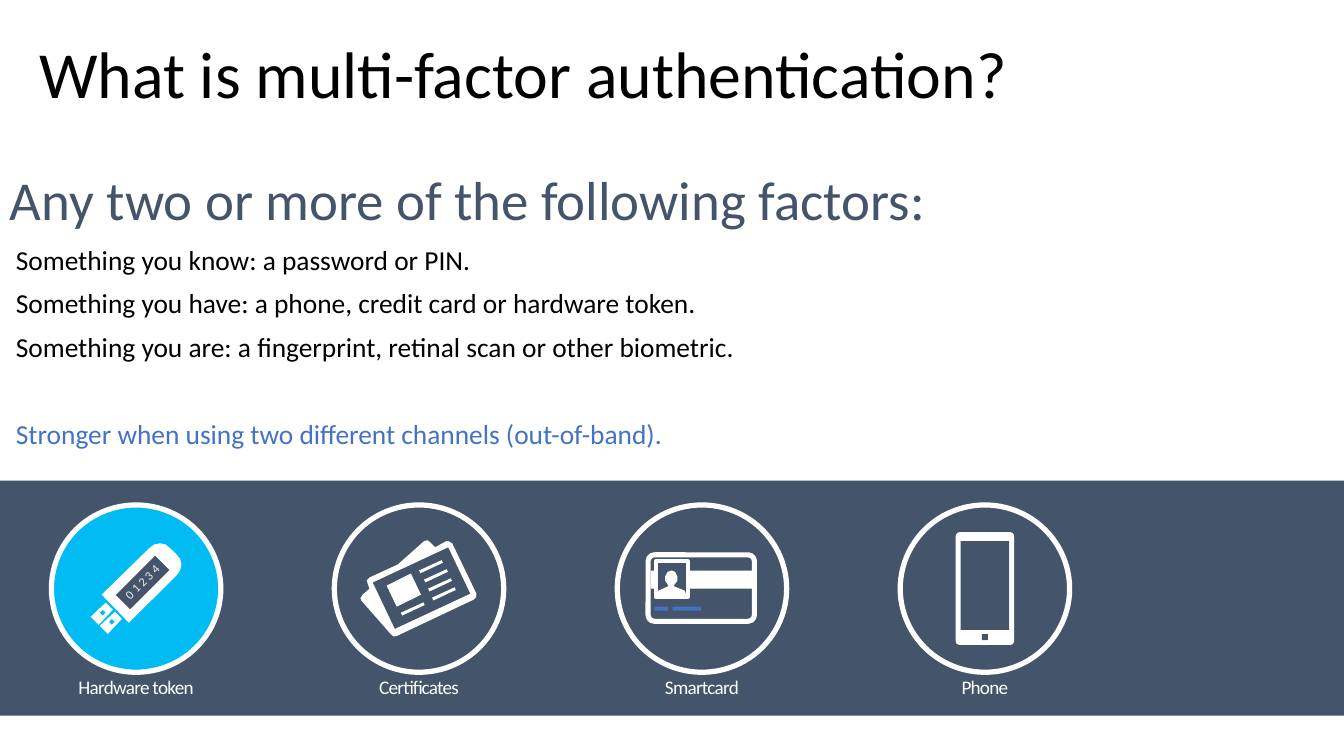
import pptx
import pptx.dml.color
import pptx.enum.shapes
import pptx.enum.text
import pptx.util

Pt = pptx.util.Pt
SHAPE = pptx.enum.shapes.MSO_SHAPE
ALIGN = pptx.enum.text.PP_ALIGN
ANCHOR = pptx.enum.text.MSO_ANCHOR

WHITE, BLACK, SLATE = "FFFFFF", "000000", "44546A"
BLUE, CYAN, PALE = "4472C4", "00BCF2", "EFEFEF"

CIRCLE_LEFT, CIRCLE_TOP, CIRCLE_STEP = 36.7, 360.7, 202.1
CIRCLE_W, CIRCLE_H = 121, 119.5


def rgb(color):
    return pptx.dml.color.RGBColor.from_string(color)


def shifted(points, dx, dy):
    return [(x + dx, y + dy) for x, y in points]


class SlideBuilder:
    """Draws styled elements on one slide, relative to a movable origin."""

    font = "Calibri"
    line_spacing = 0.9

    def __init__(self, prs):
        self.slide = prs.slides.add_slide(prs.slide_layouts[6])
        self.origin = (0, 0)

    def place(self, left, top, width, height):
        x, y = self.origin
        return Pt(x + left), Pt(y + top), Pt(width), Pt(height)

    def paint(self, sp, fill, line=None, line_width=0):
        sp.shadow.inherit = False
        if fill:
            sp.fill.solid()
            sp.fill.fore_color.rgb = rgb(fill)
        else:
            sp.fill.background()
        if line:
            sp.line.color.rgb = rgb(line)
            sp.line.width = Pt(line_width)
        else:
            sp.line.fill.background()

    def shape(self, kind, box, fill, line=None, line_width=0, radius=0):
        sp = self.slide.shapes.add_shape(kind, *self.place(*box))
        self.paint(sp, fill, line, line_width)
        if radius:
            sp.adjustments[0] = radius / min(box[2:])
        return sp

    def outline(self, contours, fill):
        """Draw closed contours as one shape; inner contours become holes."""
        x, y = self.origin
        rings = [[(Pt(px), Pt(py)) for px, py in shifted(c, x, y)]
                 for c in contours]
        builder = self.slide.shapes.build_freeform(*rings[0][0], scale=1.0)
        builder.add_line_segments(rings[0][1:], close=True)
        for ring in rings[1:]:
            builder.move_to(*ring[0])
            builder.add_line_segments(ring[1:], close=True)
        self.paint(builder.convert_to_shape(), fill)

    def text_box(self, box, insets=(7.2, 3.6), anchor=ANCHOR.TOP):
        tf = self.slide.shapes.add_textbox(*self.place(*box)).text_frame
        self.frame(tf, insets, anchor)
        return tf

    def frame(self, tf, insets, anchor):
        tf.word_wrap = True
        tf.vertical_anchor = anchor
        tf.margin_left = tf.margin_right = Pt(insets[0])
        tf.margin_top = tf.margin_bottom = Pt(insets[1])

    def paragraph(self, p, text, size, color, align=ALIGN.LEFT, spacing=0):
        p.text = text
        p.alignment = align
        p.line_spacing = self.line_spacing
        r = p.runs[0]
        r.font.name = self.font
        r.font.size = Pt(size)
        r.font.color.rgb = rgb(color)
        if spacing:
            r._r.get_or_add_rPr().set("spc", str(int(spacing * 100)))


def draw_token(s):
    body = [(36, 64.1), (69.8, 31), (73.4, 28.3), (77.8, 27.4), (81.7, 28.3),
            (85, 31), (89.3, 35.3), (92, 38.5), (92.9, 42.5), (92, 46.8),
            (89.3, 50.4), (55.4, 84.2)]
    prong = [(38.9, 69.8), (28.1, 79.9), (33.8, 85.7), (43.9, 74.9)]
    hole = [(34.6, 77), (36.7, 74.9), (38.9, 77), (36.7, 79.2)]
    prongs = [shifted(c, d, d) for d in (0, 6.5) for c in (prong, hole)]
    s.outline([body] + prongs, WHITE)
    display = s.shape(SHAPE.RECTANGLE, (45.4, 48.2, 39.6, 14.4), SLATE)
    display.rotation = 315
    tf = display.text_frame
    s.frame(tf, (0, 0), ANCHOR.MIDDLE)
    s.paragraph(tf.paragraphs[0], "01234", 8.8, PALE, ALIGN.CENTER, 2)


def draw_certificates(s):
    sheets = [(101.5, 63.4), (84.2, 27.4), (81.4, 25.9), (79.9, 25.9),
              (72, 30.2), (68.4, 26.6), (66.5, 25.2), (64.1, 25.9),
              (45.4, 42.5), (25.2, 51.8), (23.2, 53.8), (23.8, 56.2),
              (25.2, 59.8), (20.2, 64.1), (18.7, 66.5), (19.4, 68.4),
              (40.3, 92.2), (42.2, 93.9), (44.6, 93.6), (99.4, 67.7),
              (101.3, 66)]
    page = [(43.2, 88.6), (27.4, 55.4), (81.4, 30.2), (97.2, 63.4)]
    seal = [(54.7, 49), (37.4, 57.6), (44.6, 72.7), (61.9, 64.1)]
    text_line = [(0, 0), (16.2, -7.4), (17, -5.5), (1, 2)]
    starts = [(60.5, 46.8), (64.1, 53.3), (67, 59.8), (69.8, 66.2), (47.5, 77)]
    s.outline([sheets, page, seal]
              + [shifted(text_line, x, y) for x, y in starts], WHITE)


def draw_smartcard(s):
    s.shape(SHAPE.ROUNDED_RECTANGLE, (22, 35.6, 76, 47.5), None, WHITE, 3.6, 4.5)
    s.shape(SHAPE.RECTANGLE, (23.8, 46.8, 72.7, 13), WHITE)
    for left, width in ((26.6, 9.7), (39.6, 20.2)):
        s.shape(SHAPE.RECTANGLE, (left, 72.7, width, 2.9), BLUE)
    s.shape(SHAPE.RECTANGLE, (27.4, 40.3, 23, 25.2), SLATE, WHITE, 3)
    person = [(49, 65.5), (28.1, 65.5), (28.1, 63.4), (29.5, 61.2), (36, 58.3),
              (36.7, 57.6), (36, 56.9), (34.2, 54), (34.2, 51), (36, 47.8),
              (38.9, 46.8), (41.4, 47.8), (43, 51), (43, 54), (41, 56.9),
              (40.3, 57.6), (41, 58.3), (48.2, 61.2), (49, 63.4)]
    s.outline([person], WHITE)


def draw_phone(s):
    s.shape(SHAPE.ROUNDED_RECTANGLE, (39.6, 19.4, 41.8, 80.6), WHITE, radius=2.9)
    s.shape(SHAPE.RECTANGLE, (43.2, 25.9, 34.6, 63.4), SLATE)
    s.shape(SHAPE.RECTANGLE, (58.3, 92.2, 4.3, 4.3), SLATE)


FACTORS = [("Hardware token", CYAN, draw_token),
           ("Certificates", SLATE, draw_certificates),
           ("Smartcard", SLATE, draw_smartcard),
           ("Phone", SLATE, draw_phone)]

BODY = [("Something you know: a password or PIN.", BLACK, 10),
        ("Something you have: a phone, credit card or hardware token.", BLACK, 10),
        ("Something you are: a fingerprint, retinal scan or other biometric.",
         BLACK, 10),
        ("Stronger when using two different channels (out-of-band).", BLUE, 41.2)]


def main():
    prs = pptx.Presentation()
    prs.slide_width, prs.slide_height = Pt(960), Pt(540)
    s = SlideBuilder(prs)

    s.shape(SHAPE.RECTANGLE, (0, 343.4, 960, 167.8), SLATE)
    title = s.text_box((20.9, 22.3, 917.3, 65.5), anchor=ANCHOR.MIDDLE)
    s.paragraph(title.paragraphs[0], "What is multi-factor authentication?",
                47, BLACK)

    body = s.text_box((0, 120.2, 887.8, 226))
    s.paragraph(body.paragraphs[0], "Any two or more of the following factors:",
                39.2, SLATE)
    for text, color, space in BODY:
        p = body.add_paragraph()
        s.paragraph(p, text, 19.6, color)
        p.space_before = Pt(space)
        p._p.get_or_add_pPr().set("marL", str(Pt(4.3)))

    for i, (label, fill, draw_icon) in enumerate(FACTORS):
        s.origin = (CIRCLE_LEFT + i * CIRCLE_STEP, CIRCLE_TOP)
        s.shape(SHAPE.OVAL, (0, 0, CIRCLE_W, CIRCLE_H), fill, WHITE, 3.75)
        draw_icon(s)
        tf = s.text_box((0, 116, CIRCLE_W, 37.4), (14.4, 11.5))
        tf.auto_size = pptx.enum.text.MSO_AUTO_SIZE.SHAPE_TO_FIT_TEXT
        s.paragraph(tf.paragraphs[0], label, 13.7, WHITE, ALIGN.CENTER, -0.5)

    prs.save("out.pptx")


if __name__ == "__main__":
    main()
